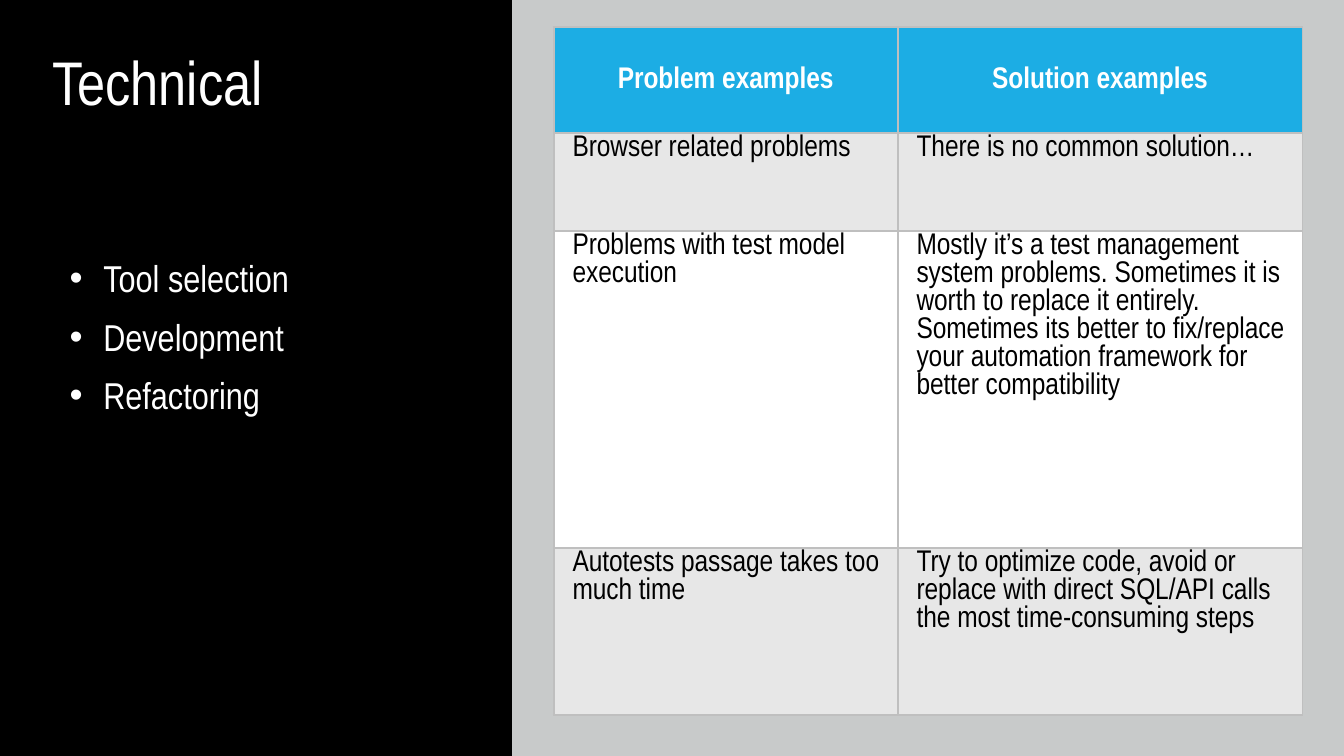
from dataclasses import dataclass

import pptx
import pptx.dml.color
import pptx.enum.shapes
import pptx.enum.text
import pptx.oxml
import pptx.oxml.ns
import pptx.util
from lxml import etree

RGBColor = pptx.dml.color.RGBColor
Inches = pptx.util.Inches
Anchor = pptx.enum.text.MSO_ANCHOR
Align = pptx.enum.text.PP_ALIGN

BLACK = RGBColor(0x00, 0x00, 0x00)
WHITE = RGBColor(0xFF, 0xFF, 0xFF)
PANEL_GREY = RGBColor(0xC8, 0xCA, 0xCA)
HEADER_BLUE = RGBColor(0x1C, 0xAD, 0xE4)
BAND_GREY = RGBColor(0xE7, 0xE7, 0xE7)
BORDER_GREY = RGBColor(0xBF, 0xBF, 0xBF)

FONT = "Arial Narrow"
SLIDE_WIDTH = Inches(10)
SLIDE_HEIGHT = SLIDE_WIDTH * 9 // 16
COLUMN_WIDTHS = (2.56, 3.01)


@dataclass(frozen=True)
class Box:
    """A rectangle given as percentages of the slide's size."""
    left: float
    top: float
    width: float
    height: float

    def lengths(self) -> tuple[int, int, int, int]:
        return (int(self.left * SLIDE_WIDTH / 100), int(self.top * SLIDE_HEIGHT / 100),
                int(self.width * SLIDE_WIDTH / 100), int(self.height * SLIDE_HEIGHT / 100))


@dataclass(frozen=True)
class TextStyle:
    size: float
    color: RGBColor
    bold: bool = False
    line_spacing: float = 1.0


@dataclass(frozen=True)
class TableRow:
    height: float
    fill: RGBColor
    texts: tuple[str, str]
    header: bool = False


TITLE_STYLE = TextStyle(33, WHITE, line_spacing=0.9)
BULLET_STYLE = TextStyle(20, WHITE, line_spacing=1.3)
HEADER_STYLE = TextStyle(16, WHITE, bold=True)
BODY_STYLE = TextStyle(16, BLACK)

TOPICS = ("Tool selection", "Development", "Refactoring")
ROWS = (
    TableRow(0.79, HEADER_BLUE, ("Problem examples", "Solution examples"), header=True),
    TableRow(0.73, BAND_GREY, ("Browser related problems", "There is no common solution…")),
    TableRow(2.36, WHITE, (
        "Problems with test model execution",
        "Mostly it’s a test management system problems. Sometimes it is worth to "
        "replace it entirely. Sometimes its better to fix/replace your automation "
        "framework for better compatibility")),
    TableRow(1.24, BAND_GREY, (
        "Autotests passage takes too much time",
        "Try to optimize code, avoid or replace with direct SQL/API calls the most "
        "time-consuming steps")),
)


def style_paragraph(paragraph, style: TextStyle) -> None:
    paragraph.line_spacing = style.line_spacing
    for run in paragraph.runs:
        run.font.name = FONT
        run.font.size = pptx.util.Pt(style.size)
        run.font.bold = style.bold
        run.font.color.rgb = style.color


def indent(paragraph, margin: float, first_line: float = 0) -> None:
    properties = paragraph._p.get_or_add_pPr()
    properties.set("marL", str(Inches(margin)))
    properties.set("indent", str(Inches(first_line)))


def add_bullet(paragraph) -> None:
    indent(paragraph, 0.38, -0.25)
    properties = paragraph._p.get_or_add_pPr()
    for tag, name, value in (("a:buFont", "typeface", "Arial"), ("a:buChar", "char", "•")):
        etree.SubElement(properties, pptx.oxml.ns.qn(tag)).set(name, value)


def add_text(slide, box: Box, text: str, style: TextStyle, anchor, bullets: bool = False) -> None:
    frame = slide.shapes.add_textbox(*box.lengths()).text_frame
    frame.word_wrap = True
    frame.vertical_anchor = anchor
    frame.text = text
    for paragraph in frame.paragraphs:
        if bullets:
            add_bullet(paragraph)
        style_paragraph(paragraph, style)


def add_panel(slide, box: Box, color: RGBColor) -> None:
    shape = slide.shapes.add_shape(pptx.enum.shapes.MSO_SHAPE.RECTANGLE, *box.lengths())
    shape.shadow.inherit = False
    shape.fill.solid()
    shape.fill.fore_color.rgb = color
    shape.line.fill.background()


def add_borders(cell) -> None:
    properties = cell._tc.get_or_add_tcPr()
    for position, side in enumerate(("lnL", "lnR", "lnT", "lnB")):
        properties.insert(position, pptx.oxml.parse_xml(
            f'<a:{side} {pptx.oxml.ns.nsdecls("a")} w="{pptx.util.Pt(1)}">'
            f'<a:solidFill><a:srgbClr val="{BORDER_GREY}"/></a:solidFill></a:{side}>'))


def fill_cell(cell, text: str, row: TableRow) -> None:
    cell.margin_left = cell.margin_right = cell.margin_top = Inches(0.01)
    cell.margin_bottom = 0
    cell.fill.solid()
    cell.fill.fore_color.rgb = row.fill
    add_borders(cell)
    cell.text = text
    paragraph = cell.text_frame.paragraphs[0]
    if row.header:
        cell.vertical_anchor = Anchor.MIDDLE
        paragraph.alignment = Align.CENTER
        style_paragraph(paragraph, HEADER_STYLE)
    else:
        cell.vertical_anchor = Anchor.TOP
        indent(paragraph, 0.13)
        style_paragraph(paragraph, BODY_STYLE)


def add_examples_table(slide, left: float, top: float) -> None:
    table = slide.shapes.add_table(
        len(ROWS), len(COLUMN_WIDTHS), Inches(left), Inches(top),
        Inches(sum(COLUMN_WIDTHS)), Inches(sum(row.height for row in ROWS))).table
    for column, width in zip(table.columns, COLUMN_WIDTHS):
        column.width = Inches(width)
    for row_index, row in enumerate(ROWS):
        table.rows[row_index].height = Inches(row.height)
        for column_index, text in enumerate(row.texts):
            fill_cell(table.cell(row_index, column_index), text, row)


def main() -> None:
    presentation = pptx.Presentation()
    presentation.slide_width, presentation.slide_height = SLIDE_WIDTH, SLIDE_HEIGHT
    slide = presentation.slides.add_slide(presentation.slide_layouts[6])
    slide.background.fill.solid()
    slide.background.fill.fore_color.rgb = BLACK

    # Left side: title and topics
    add_text(slide, Box(2.9, 2.6, 28.8, 17.4), "Technical", TITLE_STYLE, Anchor.MIDDLE)
    add_text(slide, Box(2.9, 31.15, 31.1, 31.6), "\n".join(TOPICS), BULLET_STYLE,
             Anchor.TOP, bullets=True)

    # Right side: grey panel with the table of examples
    add_panel(slide, Box(38.1, 0, 61.9, 100), PANEL_GREY)
    add_examples_table(slide, 4.12, 0.2)
    presentation.save("out.pptx")


if __name__ == "__main__":
    main()
